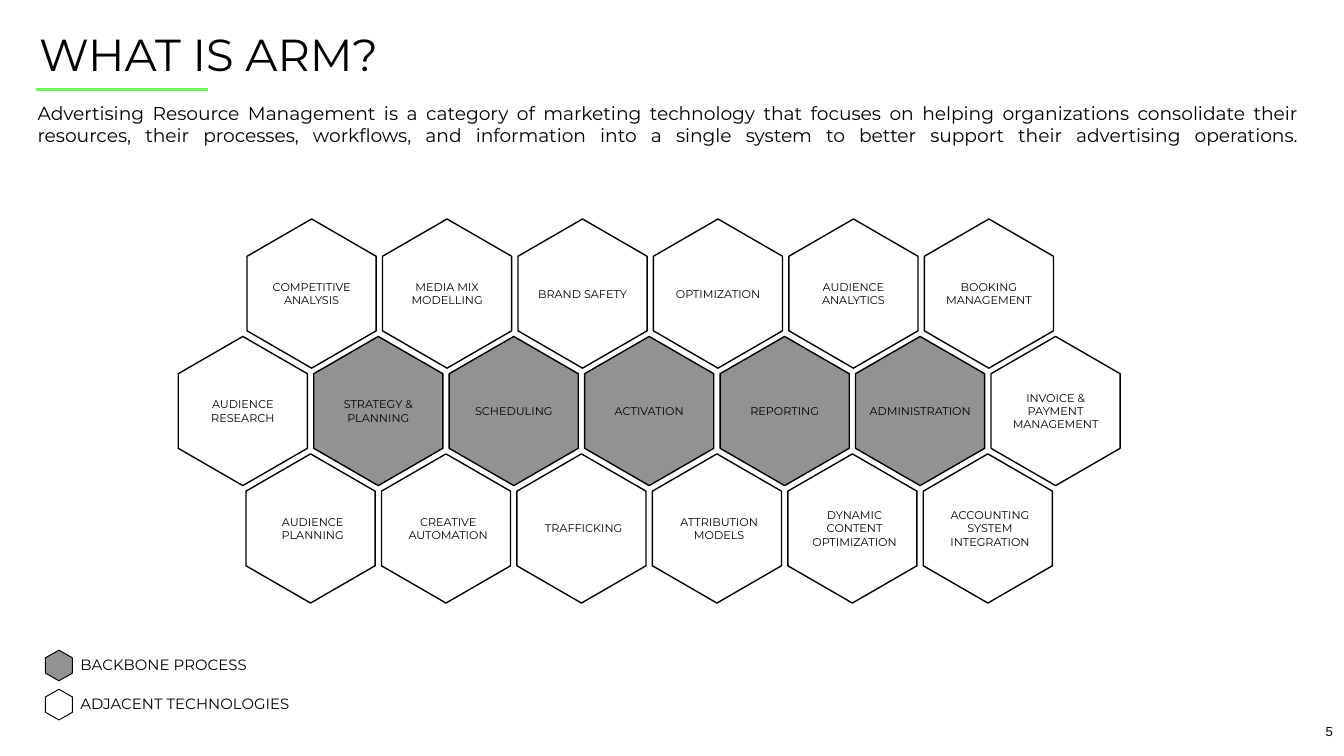
import copy
from dataclasses import dataclass

import pptx
import pptx.dml.color
import pptx.enum.shapes
import pptx.enum.text
import pptx.oxml
import pptx.util

Cm = pptx.util.Cm
Pt = pptx.util.Pt
Align = pptx.enum.text.PP_ALIGN
Anchor = pptx.enum.text.MSO_ANCHOR


@dataclass(frozen=True)
class Theme:
    ink: str = "000000"
    backbone: str = "929292"
    adjacent: str = "FFFFFF"
    accent: str = "75F461"
    font: str = "Montserrat"
    number_font: str = "Arial"
    title_size: float = 24
    intro_size: float = 10
    legend_size: float = 8
    number_size: float = 7
    label_size: float = 6


THEME = Theme()

INTRO = (
    "Advertising Resource Management is a category of marketing technology that "
    "focuses on helping organizations consolidate their resources, their processes, "
    "workflows, and information into a single system to better support their "
    "advertising operations."
)

HEX_WIDTH, HEX_HEIGHT, HEX_PITCH = 2.44, 2.82, 2.56
LABEL_WIDTH, LABEL_HEIGHT = 2.03, 0.97

# Left and top of the first hexagon, label shift to the right, labels
ROWS = [
    (4.67, 4.14, 0, [
        "COMPETITIVE ANALYSIS", "MEDIA MIX MODELLING", "BRAND SAFETY",
        "OPTIMIZATION", "AUDIENCE ANALYTICS", "BOOKING MANAGEMENT",
    ]),
    (3.37, 6.36, 0, [
        "AUDIENCE RESEARCH", "STRATEGY & PLANNING", "SCHEDULING", "ACTIVATION",
        "REPORTING", "ADMINISTRATION", "INVOICE & PAYMENT MANAGEMENT",
    ]),
    (4.65, 8.58, 0.04, [
        "AUDIENCE PLANNING", "CREATIVE AUTOMATION", "TRAFFICKING",
        "ATTRIBUTION MODELS", "DYNAMIC CONTENT OPTIMIZATION",
        "ACCOUNTING\nSYSTEM INTEGRATION",
    ]),
]
BACKBONE = {
    "STRATEGY & PLANNING", "SCHEDULING", "ACTIVATION", "REPORTING", "ADMINISTRATION",
}


def color(value):
    return pptx.dml.color.RGBColor.from_string(value)


def add_text(page, text, left, top, width, height, *, size, font=THEME.font,
             align=Align.LEFT, anchor=Anchor.TOP, inset=0.05, wrap=True,
             spacing=None):
    """Place text; a newline starts a paragraph, a vertical tab breaks a line."""
    box = page.shapes.add_textbox(Cm(left), Cm(top), Cm(width), Cm(height))
    frame = box.text_frame
    frame.word_wrap = wrap
    frame.vertical_anchor = anchor
    frame.margin_left = frame.margin_right = Cm(inset)
    frame.margin_top = frame.margin_bottom = Cm(inset)
    frame.text = text
    for para in frame.paragraphs:
        para.alignment = align
        para.line_spacing = spacing
        for span in para.runs:
            span.font.name = font
            span.font.size = Pt(size)
            span.font.color.rgb = color(THEME.ink)
        for line_break in para._p.findall(pptx.oxml.ns.qn("a:br")):
            line_break.insert(0, copy.deepcopy(para.runs[0]._r.rPr))


def add_hexagon(page, left, top, width, height, *, fill, line_width):
    """Draw an upright hexagon whose shoulders are a quarter of its height."""
    middle, right = left + width / 2, left + width
    upper, lower, bottom = top + height / 4, top + height * 3 / 4, top + height
    corners = [(right, upper), (right, lower), (middle, bottom),
               (left, lower), (left, upper)]
    builder = page.shapes.build_freeform(Cm(middle), Cm(top))
    builder.add_line_segments([(Cm(x), Cm(y)) for x, y in corners], close=True)
    hexagon = builder.convert_to_shape()
    hexagon.shadow.inherit = False
    hexagon.fill.solid()
    hexagon.fill.fore_color.rgb = color(fill)
    hexagon.line.color.rgb = color(THEME.ink)
    hexagon.line.width = Pt(line_width)


def add_rule(page, left, right, y):
    rule = page.shapes.add_connector(
        pptx.enum.shapes.MSO_CONNECTOR.STRAIGHT, Cm(left), Cm(y), Cm(right), Cm(y))
    rule.line.color.rgb = color(THEME.accent)
    rule.line.width = Pt(1.5)
    rule._element.spPr.append(
        pptx.oxml.parse_xml(
            '<a:effectLst xmlns:a='
            '"http://schemas.openxmlformats.org/drawingml/2006/main"/>'))


def add_honeycomb(page):
    for row_left, top, shift, labels in ROWS:
        for column, label in enumerate(labels):
            left = row_left + column * HEX_PITCH
            fill = THEME.backbone if label in BACKBONE else THEME.adjacent
            add_hexagon(page, left, top, HEX_WIDTH, HEX_HEIGHT,
                        fill=fill, line_width=0.75)
            width = LABEL_WIDTH if " " in label else HEX_WIDTH
            add_text(page, label, left + (HEX_WIDTH - width) / 2 + shift,
                     top + (HEX_HEIGHT - LABEL_HEIGHT) / 2, width, LABEL_HEIGHT,
                     size=THEME.label_size, align=Align.CENTER, anchor=Anchor.MIDDLE)


def add_legend(page):
    entries = [("BACKBONE PROCESS", THEME.backbone, 12.29),
               ("ADJACENT TECHNOLOGIES", THEME.adjacent, 13.03)]
    for label, fill, top in entries:
        add_hexagon(page, 0.86, top, 0.51, 0.58, fill=fill, line_width=0.5)
        add_text(page, label, 1.42, top, 6.1, 0.53,
                 size=THEME.legend_size, inset=0.1)


def main():
    deck = pptx.Presentation()
    deck.slide_width, deck.slide_height = Cm(25.4), Cm(14.29)
    page = deck.slides.add_slide(deck.slide_layouts[6])
    add_text(page, "WHAT IS ARM?", 0.69, 0.46, 24.03, 1.12, size=THEME.title_size)
    add_rule(page, 0.69, 3.94, 1.69)
    # The closing line break stretches the last line to the full width
    add_text(page, INTRO + "\v", 0.66, 1.87, 23.9, 1.47,
             size=THEME.intro_size, align=Align.JUSTIFY)
    add_honeycomb(page)
    add_legend(page)
    add_text(page, "5", 24.94, 13.64, 0.36, 0.38, size=THEME.number_size,
             font=THEME.number_font, align=Align.CENTER, anchor=Anchor.BOTTOM,
             wrap=False, spacing=1.1)
    deck.save("out.pptx")


if __name__ == "__main__":
    main()
